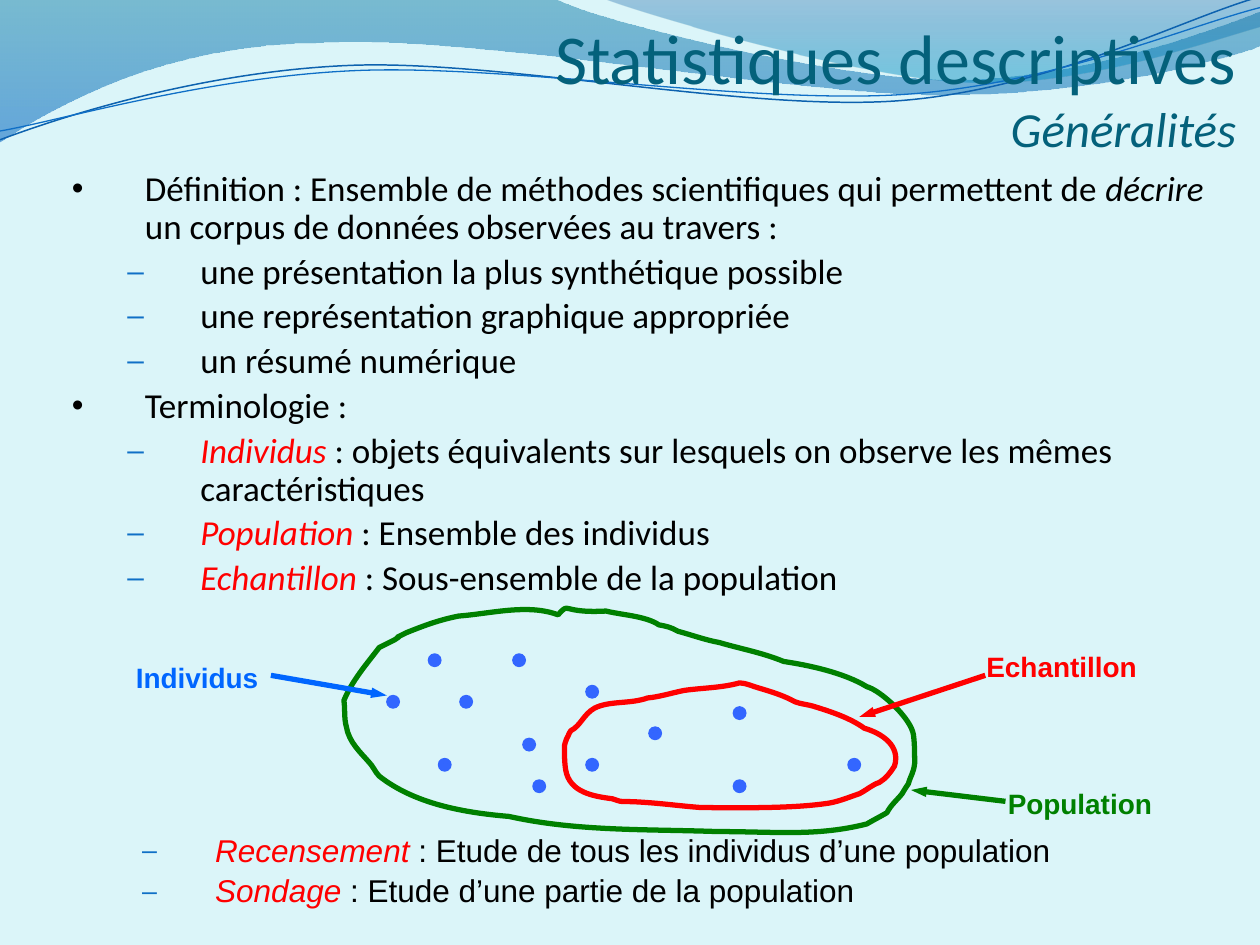
from math import cos, radians, sin
from typing import NamedTuple

from lxml import etree
from pptx import Presentation
from pptx.dml.color import RGBColor
from pptx.enum.shapes import MSO_CONNECTOR, MSO_SHAPE
from pptx.enum.text import MSO_ANCHOR, MSO_AUTO_SIZE, PP_ALIGN
from pptx.oxml.ns import qn
from pptx.util import Inches, Pt

STRAIGHT, SMILEY, RIGHT = MSO_CONNECTOR.STRAIGHT, MSO_SHAPE.SMILEY_FACE, PP_ALIGN.RIGHT
TOP, BOTTOM = MSO_ANCHOR.TOP, MSO_ANCHOR.BOTTOM
NO_FIT, GROW = MSO_AUTO_SIZE.NONE, MSO_AUTO_SIZE.SHAPE_TO_FIT_TEXT
TEAL, BLACK, RED, GREEN = "04617B", "000000", "FF0000", "008000"
BLUE, DOT_BLUE, DASH_BLUE = "0066FF", "3366FF", "0F6FC6"


class Outline(NamedTuple):
    """Segments hold one point for a line, or three for a Bézier curve."""
    box: tuple
    start: tuple
    segments: list
    closed: bool = True
    line: tuple | None = None   # colour, points
    stops: tuple = ()           # position, colour, opacity in percent
    rotation: float = 0         # already contained in the points


class Item(NamedTuple):
    level: int
    runs: list                  # text, format


class Callout(NamedTuple):
    text: str
    color: str
    box: tuple
    tail: tuple
    head: tuple


class Bullet(NamedTuple):
    char: str
    color: str
    percent: int
    margin: float


BULLETS = [Bullet("•", BLACK, 95, 0.58), Bullet("–", DASH_BLUE, 85, 1.02)]
TERM = {"italic": True, "color": RED}
WAVES = [
    Outline((-0.01, -0.01, 10.02, 1.14), (0, -0.01), [
        (4.4, -0.01), (4.76, 0.17, 6.64, 0.63, 7.58, 0.63), (8.53, 0.63, 9.58, 0.26, 10, 0.09),
        (10.01, 0.36), (9.83, 0.44, 8.7, 0.76, 7.46, 0.75), (6.22, 0.75, 3.82, 0.28, 2.57, 0.34),
        (1.29, 0.35, 0.46, 0.83, -0.01, 1.13), (0, -0.01)],
        stops=((0, "0074A1", 45), (1, "0065C1", 55))),
    Outline((4.79, -0.01, 5.21, 0.7), (4.79, -0.01), [
        (5.09, 0.11, 6.82, 0.62, 7.69, 0.65), (8.56, 0.69, 9.61, 0.32, 10, 0.21),
        (10, 0), (4.79, -0.01)], stops=((0, "00539E", 30), (0.8, "008BBF", 45))),
    Outline((-0.02, 0.22, 10.02, 0.71), (0, 1.11), [
        (0.48, 0.93, 1.58, 0.57, 2.77, 0.52), (3.95, 0.47, 5.93, 0.89, 7.13, 0.8),
        (8.33, 0.71, 9.38, 0.15, 9.98, -0.02)], False, ("0D62AF", 0.85), rotation=357.3),
    Outline((-0.02, 0.3, 10.03, 0.58), (0, 1.04), [
        (0.47, 0.96, 1.64, 0.61, 2.83, 0.56), (4.03, 0.51, 5.97, 0.83, 7.17, 0.75),
        (8.36, 0.67, 9.41, 0.21, 10, 0.06)], False, (DASH_BLUE, 0.75), rotation=357.3),
]
POPULATION = Outline((2.73, 4.77, 4.53, 1.87), (4.43, 4.88), [
    (4.19, 4.79, 3.9, 4.87, 3.64, 4.89), (3.49, 4.92, 3.38, 4.96, 3.23, 5.02),
    (3.07, 5.1, 3.24, 5.01, 3.13, 5.08), (3.09, 5.1, 3.01, 5.14, 3.01, 5.14),
    (2.91, 5.27, 2.79, 5.41, 2.73, 5.56), (2.74, 5.63, 2.73, 5.7, 2.75, 5.77),
    (2.77, 5.89, 2.86, 5.97, 2.93, 6.05), (2.96, 6.08, 2.98, 6.13, 3.01, 6.16),
    (3.29, 6.38, 3.68, 6.45, 4.04, 6.48), (4.58, 6.6, 5.13, 6.58, 5.69, 6.6),
    (6.16, 6.6, 6.48, 6.64, 6.88, 6.54), (6.93, 6.51, 6.99, 6.48, 7.04, 6.45),
    (7.07, 6.39, 7.12, 6.35, 7.16, 6.3), (7.17, 6.28, 7.21, 6.22, 7.21, 6.22),
    (7.23, 6.15, 7.25, 6.14, 7.26, 6.06), (7.26, 5.98, 7.26, 5.9, 7.25, 5.83),
    (7.23, 5.7, 6.99, 5.48, 6.88, 5.45), (6.7, 5.34, 6.42, 5.28, 6.22, 5.25),
    (6.05, 5.18, 5.88, 5.15, 5.71, 5.1), (5.6, 5.08, 5.49, 5.04, 5.38, 5.01),
    (5.33, 4.98, 5.29, 4.97, 5.23, 4.96), (5.13, 4.89, 4.93, 4.88, 4.81, 4.85),
    (4.44, 4.87, 4.53, 4.77, 4.43, 4.88)], line=(GREEN, 3))
SAMPLE = Outline((4.48, 5.42, 2.67, 1), (5.87, 5.42), [
    (5.73, 5.46, 5.57, 5.46, 5.43, 5.48), (5.33, 5.5, 5.24, 5.53, 5.14, 5.54),
    (5, 5.59, 4.84, 5.56, 4.72, 5.62), (4.63, 5.67, 4.61, 5.76, 4.53, 5.8),
    (4.52, 5.82, 4.51, 5.83, 4.51, 5.84), (4.49, 5.87, 4.48, 5.92, 4.48, 5.92),
    (4.48, 5.98, 4.48, 6.05, 4.49, 6.11), (4.52, 6.29, 4.71, 6.32, 4.86, 6.34),
    (4.98, 6.38, 4.88, 6.35, 5.14, 6.37), (5.28, 6.38, 5.43, 6.4, 5.57, 6.41),
    (5.82, 6.41, 6.24, 6.42, 6.54, 6.38), (6.64, 6.37, 6.73, 6.33, 6.82, 6.3),
    (6.88, 6.27, 6.92, 6.23, 6.98, 6.21), (7.03, 6.18, 7.07, 6.13, 7.1, 6.08),
    (7.15, 5.92, 7, 5.82, 6.86, 5.78), (6.75, 5.7, 6.6, 5.65, 6.47, 5.61),
    (6.41, 5.59, 6.36, 5.59, 6.31, 5.57), (6.22, 5.52, 6.12, 5.49, 6.02, 5.46),
    (5.98, 5.45, 5.92, 5.42, 5.87, 5.42)], line=(RED, 3))
INDIVIDUALS = [(3.4, 5.19), (4.65, 5.44), (3.07, 5.52), (4.65, 6.02), (4.07, 5.19),
               (5.15, 5.77), (5.82, 6.19), (5.82, 5.61), (3.65, 5.52), (3.48, 6.02),
               (4.15, 5.86), (4.23, 6.19), (6.73, 6.02)]
CALLOUTS = [
    Callout("Echantillon", RED, (7.73, 5.11, 1.42, 0.37), (7.82, 5.36), (6.82, 5.69)),
    Callout("Population", GREEN, (7.9, 6.19, 1.42, 0.37), (7.98, 6.36), (7.23, 6.27)),
    Callout("Individus", BLUE, (0.98, 5.19, 1.33, 0.37), (2.15, 5.36), (3.07, 5.52)),
]
DEFINITIONS = [
    Item(0, [("Définition : Ensemble de méthodes scientifiques qui permettent de ", {}),
             ("décrire", {"italic": True}), (" un corpus de données observées au travers :", {})]),
    Item(1, [("une présentation la plus synthétique possible", {})]),
    Item(1, [("une représentation graphique appropriée", {})]),
    Item(1, [("un résumé numérique", {})]),
    Item(0, [("Terminologie :", {})]),
    Item(1, [("Individus", TERM),
             (" : objets équivalents sur lesquels on observe les mêmes caractéristiques", {})]),
    Item(1, [("Population", TERM), (" : Ensemble des individus", {})]),
    Item(1, [("Echantillon", TERM), (" : Sous-ensemble de la population", {})]),
]
SURVEYS = [
    Item(1, [("Recensement ", TERM), (": Etude de tous les individus d’une population", {})]),
    Item(1, [("Sondage ", TERM), (": Etude d’une partie de la population", {})]),
]


def rgb(value: str) -> RGBColor:
    return RGBColor.from_string(value)


def set_line(sp, color: str, width: float) -> None:
    sp.line.color.rgb, sp.line.width = rgb(color), Pt(width)


def add_run(p, text: str, color: str = BLACK, **fmt) -> None:
    r = p.add_run()
    r.text, r.font.color.rgb = text, rgb(color)
    for name, value in fmt.items():
        setattr(r.font, name, value)


def draw_outline(shapes, o: Outline) -> None:
    left, top, width, height = o.box
    builder = shapes.build_freeform(*map(Inches, o.start))
    builder.add_line_segments([tuple(map(Inches, seg[-2:])) for seg in o.segments], o.closed)
    sp = builder.convert_to_shape()
    sp.left, sp.top, sp.width, sp.height = map(Inches, o.box)
    sp.rotation, sp.shadow.inherit = o.rotation, False
    path = next(sp._element.iter(qn("a:path")))
    path.set("w", str(sp.width))
    path.set("h", str(sp.height))
    c, n = cos(radians(o.rotation)), sin(radians(o.rotation))
    for step, seg in zip(list(path), [o.start, *o.segments]):
        step.tag = qn("a:cubicBezTo") if len(seg) == 6 else step.tag
        step[:] = []
        for x, y in zip(seg[::2], seg[1::2]):
            dx, dy = x - left - width / 2, y - top - height / 2
            etree.SubElement(step, qn("a:pt"), x=str(Inches(dx * c + dy * n + width / 2)),
                             y=str(Inches(dy * c - dx * n + height / 2)))
    if o.line:
        sp.fill.background()
        set_line(sp, *o.line)
        return
    sp.line.fill.background()
    sp.fill.gradient()
    sp.fill.gradient_angle = 270
    for stop, (position, color, _) in zip(sp.fill.gradient_stops, o.stops):
        stop.position, stop.color.rgb = position, rgb(color)
    for clr, (_, _, opacity) in zip(sp._element.spPr.iter(qn("a:srgbClr")), o.stops):
        etree.SubElement(clr, qn("a:alpha"), val=str(opacity * 1000))


def write_list(sp, items: list[Item], size: float, font: str, fit) -> None:
    tf = sp.text_frame
    tf.word_wrap, tf.auto_size, tf.vertical_anchor = True, fit, TOP
    for i, item in enumerate(items):
        p = tf.add_paragraph() if i else tf.paragraphs[0]
        p.level, p.line_spacing, p.space_before = item.level, 0.9, Pt(0.2 * size if i else 0)
        b, pPr = BULLETS[item.level], p._p.get_or_add_pPr()
        pPr.set("marL", str(Inches(b.margin)))
        pPr.set("indent", str(Inches(-0.58)))
        etree.SubElement(etree.SubElement(pPr, qn("a:buClr")), qn("a:srgbClr"), val=b.color)
        etree.SubElement(pPr, qn("a:buSzPct"), val=str(b.percent * 1000))
        etree.SubElement(pPr, qn("a:buFont"), typeface="Arial")
        etree.SubElement(pPr, qn("a:buChar"), char=b.char)
        for text, fmt in item.runs:
            add_run(p, text, **{"size": Pt(size), "name": font, **fmt})


def draw_individual(shapes, left: float, top: float) -> None:
    sp = shapes.add_shape(SMILEY, *map(Inches, (left, top, 0.1, 0.1)))
    sp.shadow.inherit = False
    sp.fill.solid()
    sp.fill.fore_color.rgb = rgb(DOT_BLUE)
    set_line(sp, DOT_BLUE, 0.75)


def draw_callout(shapes, c: Callout) -> None:
    tf = shapes.add_textbox(*map(Inches, c.box)).text_frame
    tf.word_wrap, tf.auto_size = True, GROW
    add_run(tf.paragraphs[0], c.text, c.color, size=Pt(16), name="Arial", bold=True)
    arrow = shapes.add_connector(STRAIGHT, *map(Inches, c.tail + c.head))
    set_line(arrow, c.color, 3)
    etree.SubElement(arrow.line._get_or_add_ln(), qn("a:tailEnd"), type="triangle", w="sm")
    etree.SubElement(arrow._element.spPr, qn("a:effectLst"))


def main() -> None:
    prs = Presentation()
    prs.slide_width, prs.slide_height = Inches(10), Inches(7.5)
    s = prs.slides.add_slide(prs.slide_layouts[1])
    s.background.fill.solid()
    s.background.fill.fore_color.rgb = rgb("DBF5F9")
    title, body = s.placeholders
    for wave in WAVES:
        draw_outline(s.shapes, wave)
    for sp, box in ((title, (1.54, 0, 8.27, 1.25)), (body, (0.47, 1.31, 9.53, 4.83))):
        s.shapes._spTree.append(sp._element)    # in front of the waves
        sp.left, sp.top, sp.width, sp.height = map(Inches, box)

    tf = title.text_frame
    tf.auto_size, tf.vertical_anchor = NO_FIT, BOTTOM
    tf.margin_left = tf.margin_right = tf.margin_bottom = 0
    p = tf.paragraphs[0]
    p.alignment = RIGHT
    add_run(p, "Statistiques descriptives", TEAL, size=Pt(40), name="Calibri")
    p.add_line_break()
    add_run(p, "Généralités", TEAL, size=Pt(28), name="Calibri", italic=True)
    write_list(body, DEFINITIONS, 20, "Calibri", NO_FIT)
    surveys = s.shapes.add_textbox(*map(Inches, (0.59, 6.58, 8.67, 0.71)))
    write_list(surveys, SURVEYS, 18, "Arial", GROW)

    diagram = s.shapes.add_group_shape().shapes
    draw_outline(diagram, POPULATION)
    for spot in INDIVIDUALS:
        draw_individual(diagram, *spot)
    draw_outline(diagram, SAMPLE)
    for callout in CALLOUTS:
        draw_callout(diagram, callout)
    prs.save("out.pptx")


if __name__ == "__main__":
    main()
